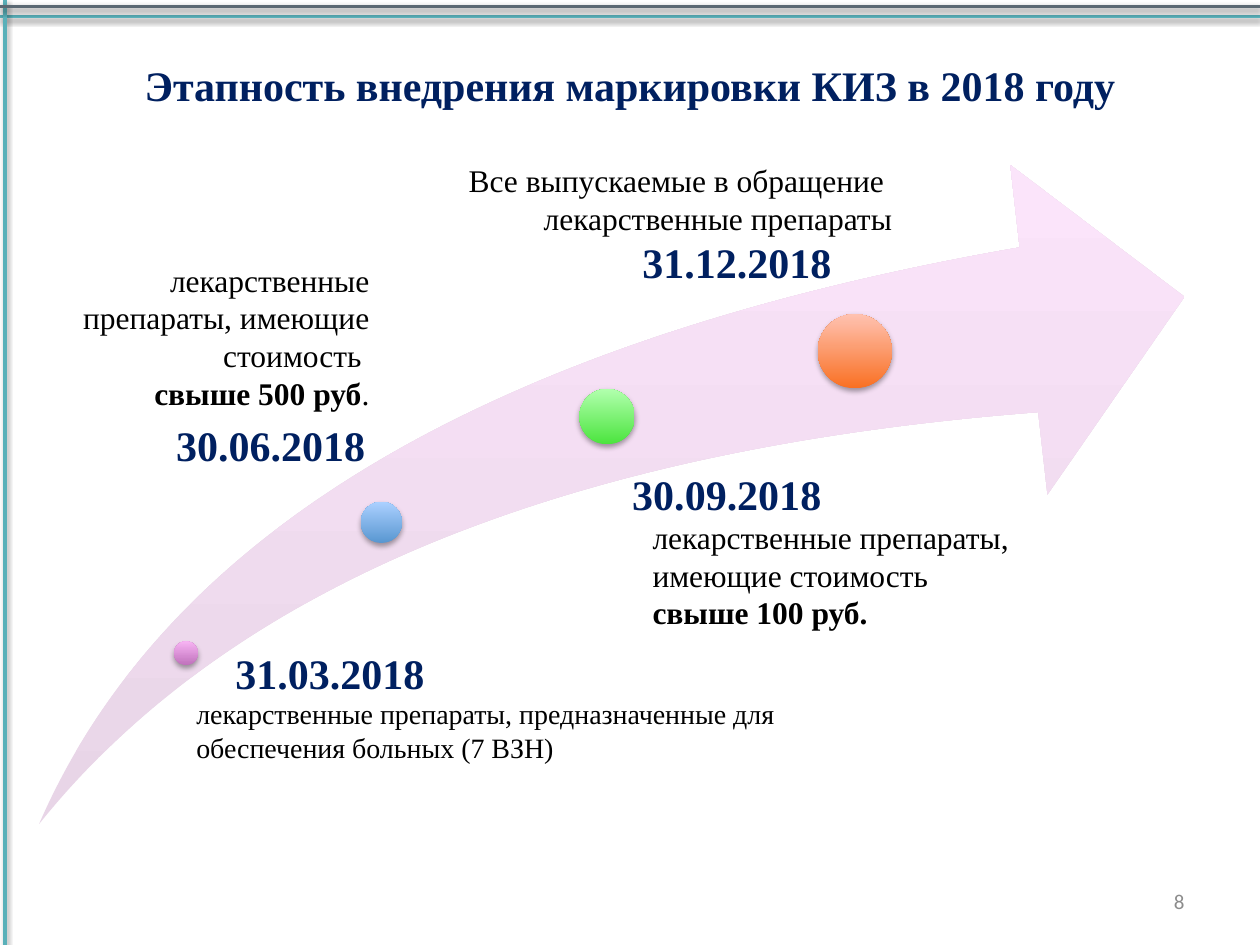
from lxml.etree import SubElement
from pptx import Presentation
from pptx.dml.color import RGBColor
from pptx.enum.shapes import MSO_CONNECTOR, MSO_SHAPE
from pptx.enum.text import MSO_ANCHOR, MSO_AUTO_SIZE, PP_ALIGN
from pptx.oxml.ns import qn
from pptx.util import Pt

WIDTH, HEIGHT = 720, 540
SERIF = "Times New Roman"
COLORS = {
    "navy": "002060", "black": "000000", "gray": "8C8C8C",
    "teal": "59B0B9", "slate": "5B6973",
}
FADES = {
    "arrow": ("E8D5E7", "FBE4FA"),
    "pink": ("C072BC", "F7B3F3"),
    "blue": ("5997D1", "ABD0FF"),
    "green": ("4CE43F", "B1FFAD"),
    "orange": ("F97023", "FFC2B1"),
}
DOTS = [
    ("pink", 84, 279, 13.6),
    ("blue", 195.6, 204.2, 23.6),
    ("green", 324.6, 143.8, 31.6),
    ("orange", 466.2, 106.4, 42.4),
]
DATES = [
    ("31.12.2018", (360, 131.8, 124.6, 36)),
    ("31.03.2018", (127.4, 366.5, 131, 36)),
    ("30.06.2018", (93.6, 236.2, 131, 36)),
    ("30.09.2018", (354.2, 264.2, 131, 36)),
]
NOTES = [
    ((105.1, 394.6, 427.7, 46), 16, PP_ALIGN.LEFT, True,
     [[("лекарственные препараты, предназначенные для обеспечения больных (7 ВЗН)", False)]]),
    ((25.2, 145.4, 193, 94.3), 18, PP_ALIGN.RIGHT, True,
     [[("лекарственные препараты, имеющие стоимость ", False)],
      [("свыше 500 руб", True), (".", False)]]),
    ((365.8, 292.3, 232.6, 72.7), 18, PP_ALIGN.LEFT, True,
     [[("лекарственные препараты, имеющие стоимость", False)],
      [("свыше 100 руб.", True)]]),
    ((257.8, 88.6, 259.2, 51), 18, PP_ALIGN.RIGHT, False,
     [[("Все выпускаемые в обращение ", False)],
      [("лекарственные препараты", False)]]),
]


def cast(effects, alpha, blur, dist):
    shade = SubElement(effects, qn("a:outerShdw"), blurRad=str(Pt(blur)),
                       dist=str(Pt(dist)), dir="5400000", rotWithShape="0")
    color = SubElement(shade, qn("a:srgbClr"), val=COLORS["black"])
    SubElement(color, qn("a:alpha"), val=str(alpha * 1000))


def add_run(para, text, size, color, bold=False, face=SERIF):
    run = para.add_run()
    run.text = text
    font = run.font
    font.name, font.size, font.bold = face, Pt(size), bold
    font.color.rgb = RGBColor.from_string(COLORS[color])


def add_box(slide, box, wrap=True):
    frame = slide.shapes.add_textbox(*map(Pt, box)).text_frame
    frame.word_wrap = wrap
    frame.auto_size = MSO_AUTO_SIZE.SHAPE_TO_FIT_TEXT
    return frame


def add_form(group, kind, box, fade):
    form = group.shapes.add_shape(kind, *map(Pt, box))
    form.shadow.inherit = False
    form.line.fill.background()
    form.fill.gradient()
    form.fill.gradient_angle = 90
    for stop, color in zip(form.fill.gradient_stops, FADES[fade]):
        stop.color.rgb = RGBColor.from_string(color)
    return form


def add_frame(slide, box):
    left, top, width, height = box
    right, base = left + width, top + height
    rules = [
        ((right, top + 9.4, left, top + 9.4), "teal"),
        ((left + 2.9, top, left + 2.9, base), "teal"),
        ((left, top + 3.6, right, top + 3.6), "slate"),
    ]
    for ends, color in rules:
        rule = slide.shapes.add_connector(MSO_CONNECTOR.STRAIGHT, *map(Pt, ends))
        rule.line.width = Pt(2)
        rule.line.color.rgb = RGBColor.from_string(COLORS[color])
        cast(SubElement(rule._element.spPr, qn("a:effectLst")), 38, 3.1, 1.6)


def add_path(slide, box):
    group = slide.shapes.add_group_shape()
    arrow = add_form(group, MSO_SHAPE.SWOOSH_ARROW, box, "arrow")
    arrow.adjustments[0] = arrow.adjustments[1] = 0.25
    left, top = box[:2]
    for fade, x, y, size in DOTS:
        spot = (left + x - size / 2, top + y - size / 2, size, size)
        dot = add_form(group, MSO_SHAPE.OVAL, spot, fade)
        cast(dot._element.spPr.find(qn("a:effectLst")), 35, 3.1, 1.8)


def add_title(slide, box):
    title = slide.shapes.title
    title.left, title.top, title.width, title.height = map(Pt, box)
    frame = title.text_frame
    frame.vertical_anchor = MSO_ANCHOR.MIDDLE
    para = frame.paragraphs[0]
    para.alignment = PP_ALIGN.CENTER
    add_run(para, "Этапность внедрения маркировки КИЗ в 2018 году", 24, "navy", True)


def add_date(slide, box, text):
    add_run(add_box(slide, box).paragraphs[0], text, 24, "navy", True)


def add_note(slide, box, size, align, wrap, lines):
    frame = add_box(slide, box, wrap)
    for i, line in enumerate(lines):
        para = frame.add_paragraph() if i else frame.paragraphs[0]
        para.alignment = align
        for text, bold in line:
            add_run(para, text, size, "black", bold)


def add_page(slide, box):
    frame = add_box(slide, box)
    frame.auto_size = MSO_AUTO_SIZE.NONE
    frame.vertical_anchor = MSO_ANCHOR.MIDDLE
    para = frame.paragraphs[0]
    para.alignment = PP_ALIGN.RIGHT
    add_run(para, "8", 12, "gray", face="Calibri")


def main():
    deck = Presentation()
    deck.slide_width, deck.slide_height = Pt(WIDTH), Pt(HEIGHT)
    slide = deck.slides.add_slide(deck.slide_layouts[5])
    add_frame(slide, (0, 0, WIDTH, HEIGHT))
    add_path(slide, (22.3, 94.3, 654.5, 376.6))
    add_page(slide, (516, 500.5, 168, 28.8))
    for text, box in DATES:
        add_date(slide, box, text)
    add_title(slide, (36, 3.6, 648, 90))
    for note in NOTES:
        add_note(slide, *note)
    deck.save("out.pptx")


if __name__ == "__main__":
    main()
